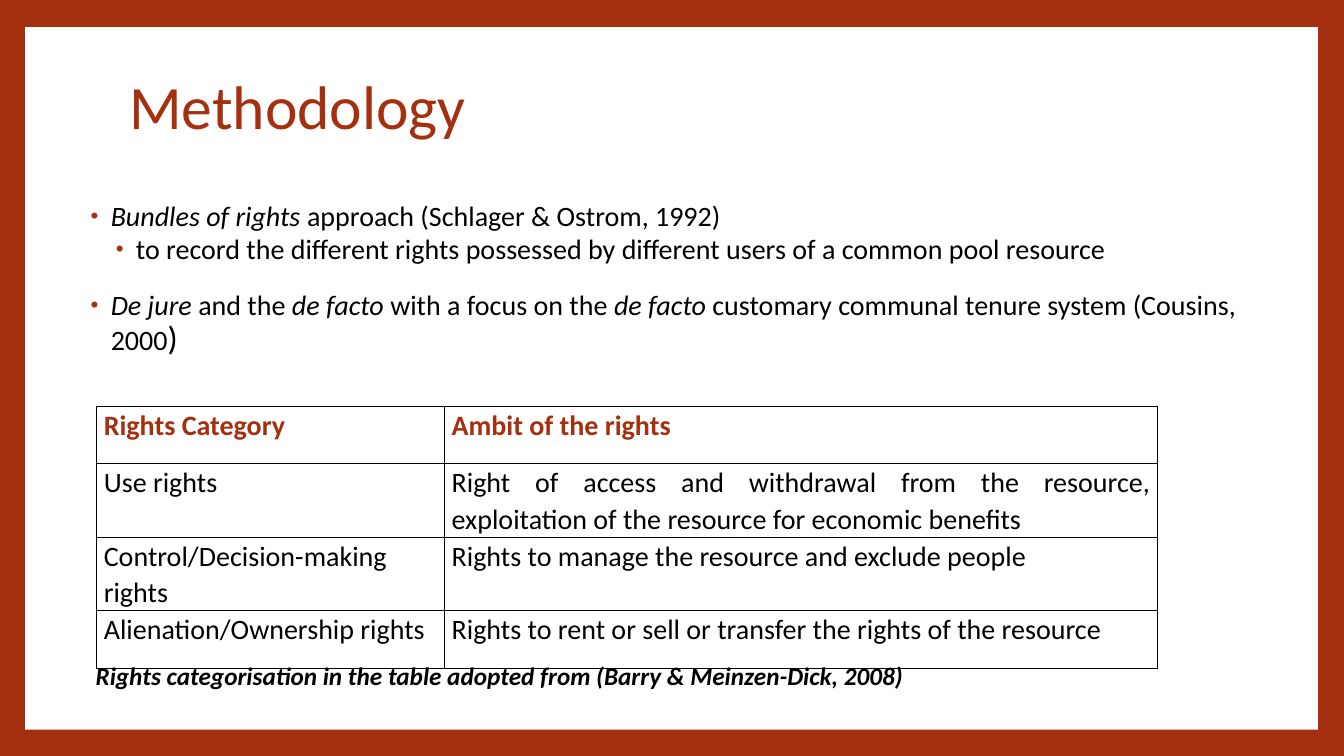
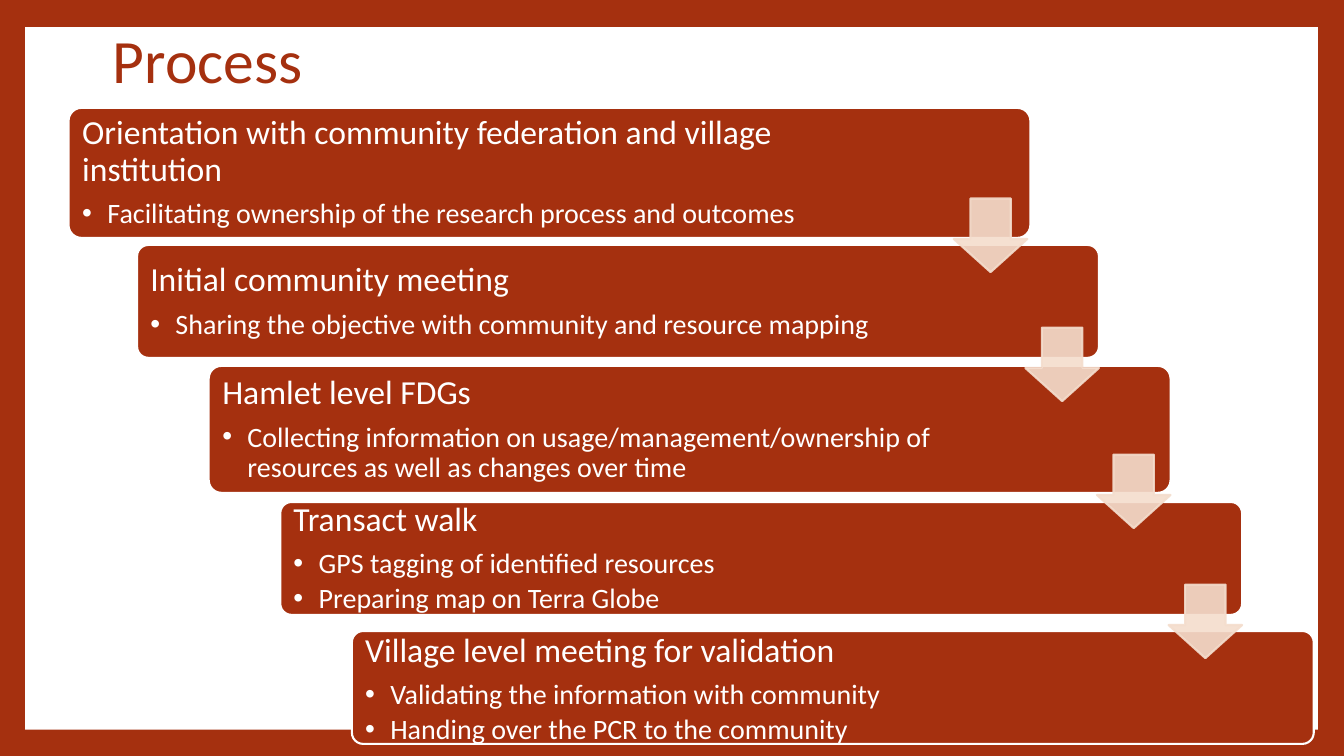
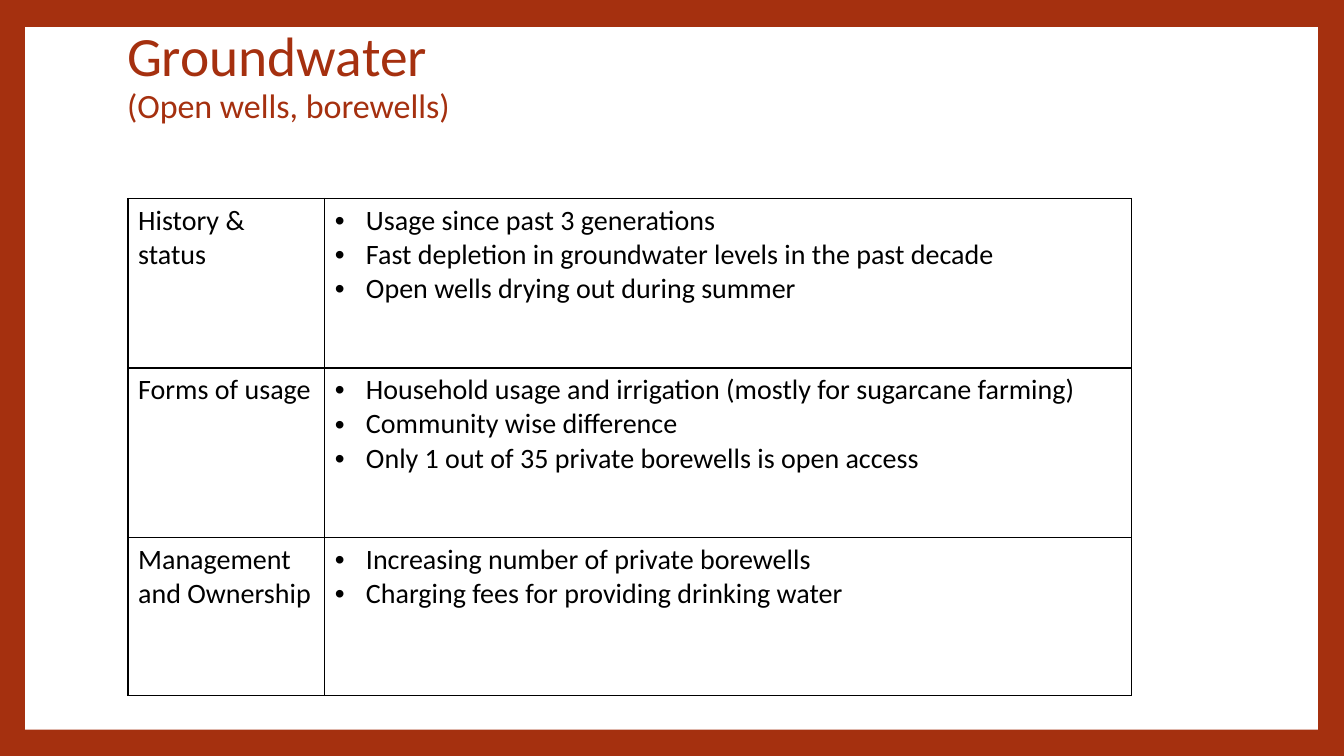
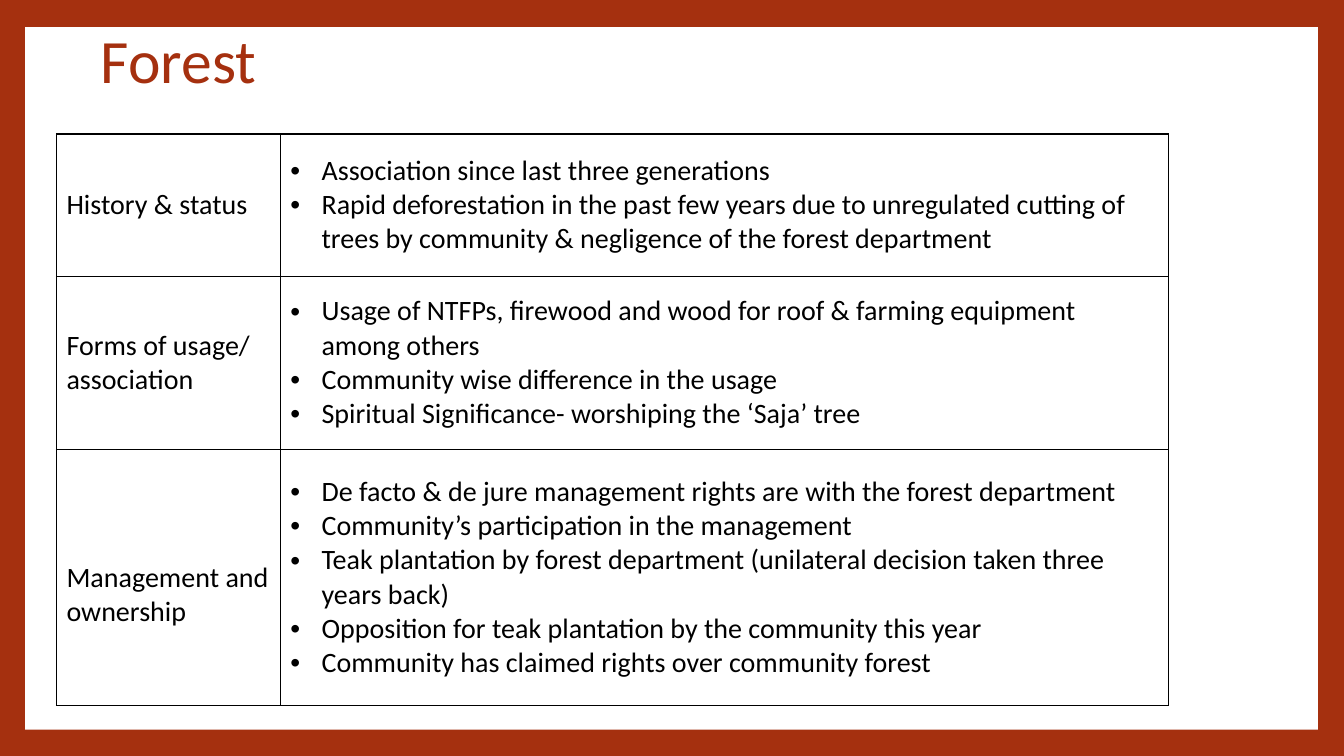
from lxml import etree
from pptx import Presentation
from pptx.dml.color import RGBColor
from pptx.enum.shapes import MSO_SHAPE
from pptx.enum.text import MSO_ANCHOR, MSO_AUTO_SIZE, PP_ALIGN
from pptx.oxml.ns import qn
from pptx.util import Inches, Pt

RECT, ROUNDED = MSO_SHAPE.RECTANGLE, MSO_SHAPE.ROUNDED_RECTANGLE
DOWN_ARROW = MSO_SHAPE.DOWN_ARROW
TOP, MIDDLE = MSO_ANCHOR.TOP, MSO_ANCHOR.MIDDLE
LEFT, JUSTIFY = PP_ALIGN.LEFT, PP_ALIGN.JUSTIFY
NO_AUTOFIT = MSO_AUTO_SIZE.NONE

FONT = "Calibri"
RUST, PEACH, WHITE, BLACK = "A5300F", "F4DDCD", "FFFFFF", "000000"

RIGHTS = [
    ["Rights Category", "Ambit of the rights"],
    ["Use rights", "Right of access and withdrawal from the resource, "
                   "exploitation of the resource for economic benefits"],
    ["Control/Decision-making rights", "Rights to manage the resource and exclude people"],
    ["Alienation/Ownership rights", "Rights to rent or sell or transfer the rights of the resource"],
]

STEPS = [
    (0.68, 1.07, 1.29, 0.9, "Orientation with community federation and village institution",
     ["Facilitating ownership of the research process and outcomes"]),
    (1.36, 2.43, 1.12, 0.9, "Initial community meeting",
     ["Sharing the objective with community and resource mapping"]),
    (2.07, 3.63, 1.26, 0.9, "Hamlet level FDGs",
     ["Collecting information on usage/management/ownership of resources "
      "as well as changes over time"]),
    (2.78, 4.98, 1.12, 0.9, "Transact walk",
     ["GPS tagging of identified resources", "Preparing map on Terra Globe"]),
    (3.49, 6.26, 1.12, 1.0, "Village level meeting for validation",
     ["Validating the information with community", "Handing over the PCR to the community"]),
]
ARROW_TOPS = [1.97, 3.25, 4.51, 5.8]

GROUNDWATER = [
    ["History & status", ["Usage since past 3 generations",
                          "Fast depletion in groundwater levels in the past decade",
                          "Open wells drying out during summer"]],
    ["Forms of usage", ["Household usage and irrigation (mostly for sugarcane farming)",
                        "Community wise difference",
                        "Only 1 out of 35 private borewells is open access"]],
    ["Management and Ownership", ["Increasing number of private borewells",
                                  "Charging fees for providing drinking water"]],
]

FOREST = [
    ["History & status", ["Association since last three generations",
                          "Rapid deforestation in the past few years due to unregulated cutting "
                          "of trees by community & negligence of the forest department"]],
    ["Forms of usage/ association", ["Usage of NTFPs, firewood and wood for roof & farming "
                                     "equipment among others",
                                     "Community wise difference in the usage",
                                     "Spiritual Significance- worshiping the ‘Saja’ tree"]],
    ["Management and ownership", ["De facto & de jure management rights are with the forest department",
                                  "Community’s participation in the management",
                                  "Teak plantation by forest department (unilateral decision "
                                  "taken three years back)",
                                  "Opposition for teak plantation by the community this year",
                                  "Community has claimed rights over community forest"]],
]


def rgb(color):
    return RGBColor.from_string(color)


def box(at):
    return [Inches(v) for v in at]


def sub(parent, tag, **attrs):
    el = etree.SubElement(parent, qn(tag))
    for name, value in attrs.items():
        el.set(name, str(value))
    return el


def set_fill(fill, color):
    fill.solid()
    fill.fore_color.rgb = rgb(color)


def style(r, size, color=BLACK, bold=False, italic=False):
    f = r.font
    f.name, f.size, f.bold, f.italic = FONT, Pt(size), bold, italic
    f.color.rgb = rgb(color)


def set_margins(item, left, top, right, bottom):
    item.margin_left, item.margin_top, item.margin_right, item.margin_bottom = box(
        (left, top, right, bottom))


def add_bullet(p, left, hang, color=None, percent=None):
    pPr = p._p.get_or_add_pPr()
    pPr.set("marL", str(Inches(left)))
    pPr.set("indent", str(-Inches(hang)))
    if color:
        sub(sub(pPr, "a:buClr"), "a:srgbClr", val=color)
    if percent:
        sub(pPr, "a:buSzPct", val=percent * 1000)
    sub(pPr, "a:buFont", typeface="Arial")
    sub(pPr, "a:buChar", char="•")


def next_paragraph(tf, first):
    return tf.paragraphs[0] if first else tf.add_paragraph()


def add_shape(s, kind, at, fill, line=None):
    sp = s.shapes.add_shape(kind, *box(at))
    sp.shadow.inherit = False
    set_fill(sp.fill, fill)
    if line:
        sp.line.color.rgb = rgb(line)
        sp.line.width = Pt(1.5)
    else:
        sp.line.fill.background()
    return sp


def add_text_box(s, at):
    tf = s.shapes.add_textbox(*box(at)).text_frame
    tf.word_wrap = True
    return tf


def add_slide(prs, title, at, sizes=(44,)):
    s = prs.slides.add_slide(prs.slide_layouts[5])
    panel = add_shape(s, RECT, (0.25, 0.27, 12.82, 6.97), WHITE)
    s.shapes.element.insert(2, panel.element)
    sp = s.shapes.title
    sp.left, sp.top, sp.width, sp.height = box(at)
    tf = sp.text_frame
    tf.text = title
    tf.auto_size = NO_AUTOFIT
    tf.vertical_anchor = MIDDLE
    p = tf.paragraphs[0]
    p.alignment = LEFT
    p.line_spacing = 0.9
    for r, size in zip(p.runs, sizes):
        style(r, size, RUST)
    return s


def set_borders(cell):
    tcPr = cell._tc.get_or_add_tcPr()
    for i, tag in enumerate(("a:lnL", "a:lnR", "a:lnT", "a:lnB")):
        ln = sub(tcPr, tag, w=Pt(1))
        sub(sub(ln, "a:solidFill"), "a:srgbClr", val=BLACK)
        tcPr.insert(i, ln)


def fill_cell(cell, content, anchor):
    cell.fill.background()
    set_borders(cell)
    cell.vertical_anchor = anchor
    bulleted = isinstance(content, list)
    for i, text in enumerate(content if bulleted else [content]):
        p = next_paragraph(cell.text_frame, i == 0)
        p.text = text
        style(p.runs[0], 20)
        if bulleted:
            add_bullet(p, 0.31, 0.31)


def add_table(s, left, top, cols, heights, rows, anchor=TOP):
    at = (left, top, sum(cols), sum(heights))
    table = s.shapes.add_table(len(rows), len(cols), *box(at)).table
    table.first_row = table.horz_banding = False
    for column, width in zip(table.columns, cols):
        column.width = Inches(width)
    for row, height, contents in zip(table.rows, heights, rows):
        row.height = Inches(height)
        for cell, content in zip(row.cells, contents):
            fill_cell(cell, content, anchor)
    return table


def add_point(tf, runs, first=False, level=0):
    p = next_paragraph(tf, first)
    p.level = level
    p.line_spacing = 0.9
    p.space_before = Pt(2 if level else 14)
    p.space_after = Pt(4 if level else 0)
    add_bullet(p, 0.25 * (level + 1), 0.2, RUST, 80)
    for text, italic, size in runs:
        r = p.add_run()
        r.text = text
        style(r, size, italic=italic)


def add_step(s, left, top, height, heading_spacing, heading, points):
    sp = add_shape(s, ROUNDED, (left, top, 9.54, height), RUST, WHITE)
    sp.adjustments[0] = 0.1
    tf = sp.text_frame
    tf.word_wrap = True
    tf.vertical_anchor = MIDDLE
    set_margins(tf, 0.1, 0.1, 1.53, 0.1)
    for i, text in enumerate([heading] + points):
        p = next_paragraph(tf, i == 0)
        p.text = text
        p.alignment = LEFT
        p.line_spacing = 0.9 if i else heading_spacing
        p.space_after = Pt(3.3 if i else 8)
        style(p.runs[0], 20 if i else 24, WHITE)
        if i:
            p.level = 1
            add_bullet(p, 0.25, 0.25)


def add_arrow(s, left, top):
    sp = add_shape(s, DOWN_ARROW, (left, top, 0.73, 0.73), PEACH, PEACH)
    sp.adjustments[0], sp.adjustments[1] = 0.55, 0.45
    for color in sp.element.spPr.iter(qn("a:srgbClr")):
        sub(color, "a:alpha", val=90000)


def methodology(prs):
    s = add_slide(prs, "Methodology", (1.18, 0.35, 10.8, 1.48))
    tf = add_text_box(s, (0.75, 1.96, 11.75, 2.02))
    add_point(tf, [("Bundles of rights ", True, 20),
                   ("approach (Schlager & Ostrom, 1992)", False, 20)], first=True)
    add_point(tf, [("to record the different rights possessed by different users "
                    "of a common pool resource", False, 20)], level=1)
    add_point(tf, [("De jure ", True, 20), ("and the ", False, 20), ("de facto ", True, 20),
                   ("with a focus on the ", False, 20), ("de facto ", True, 20),
                   ("customary communal tenure system (Cousins, 2000", False, 20),
                   (")", False, 24)])
    table = add_table(s, 0.96, 4.03, (3.45, 7.07), (0.57, 0.73, 0.73, 0.57), RIGHTS)
    for cell in table.iter_cells():
        set_margins(cell, 0.07, 0, 0.07, 0)
        p = cell.text_frame.paragraphs[0]
        p.alignment = JUSTIFY
        p.line_spacing = 1.07
    for cell in table.rows[0].cells:
        style(cell.text_frame.paragraphs[0].runs[0], 20, RUST, bold=True)
    tf = add_text_box(s, (0.85, 6.5, 11.67, 0.4))
    tf.text = "Rights categorisation in the table adopted from (Barry & Meinzen-Dick, 2008)"
    style(tf.paragraphs[0].runs[0], 18, bold=True, italic=True)


def process(prs):
    s = add_slide(prs, "Process", (1.02, 0.16, 9.75, 0.95))
    for step in STEPS:
        add_step(s, *step)
    for i, top in enumerate(ARROW_TOPS):
        add_arrow(s, 9.46 + 0.71 * i, top)


def groundwater(prs):
    s = add_slide(prs, "Groundwater\v(Open wells, borewells)", (1.16, 0.28, 8.56, 0.97),
                  (39.6, 24.3))
    add_table(s, 1.27, 1.97, (1.95, 8), (1.68, 1.68, 1.57), GROUNDWATER)


def forest(prs):
    s = add_slide(prs, "Forest", (0.9, 0.25, 9.75, 0.77))
    table = add_table(s, 0.56, 1.33, (2.22, 8.81), (1.41, 1.72, 2.54), FOREST, MIDDLE)
    table.cell(2, 0).margin_top = Inches(0.39)


def main():
    prs = Presentation()
    prs.slide_width, prs.slide_height = box((13.33, 7.5))
    set_fill(prs.slide_master.background.fill, RUST)
    methodology(prs)
    process(prs)
    groundwater(prs)
    forest(prs)
    prs.save("out.pptx")


if __name__ == "__main__":
    main()
